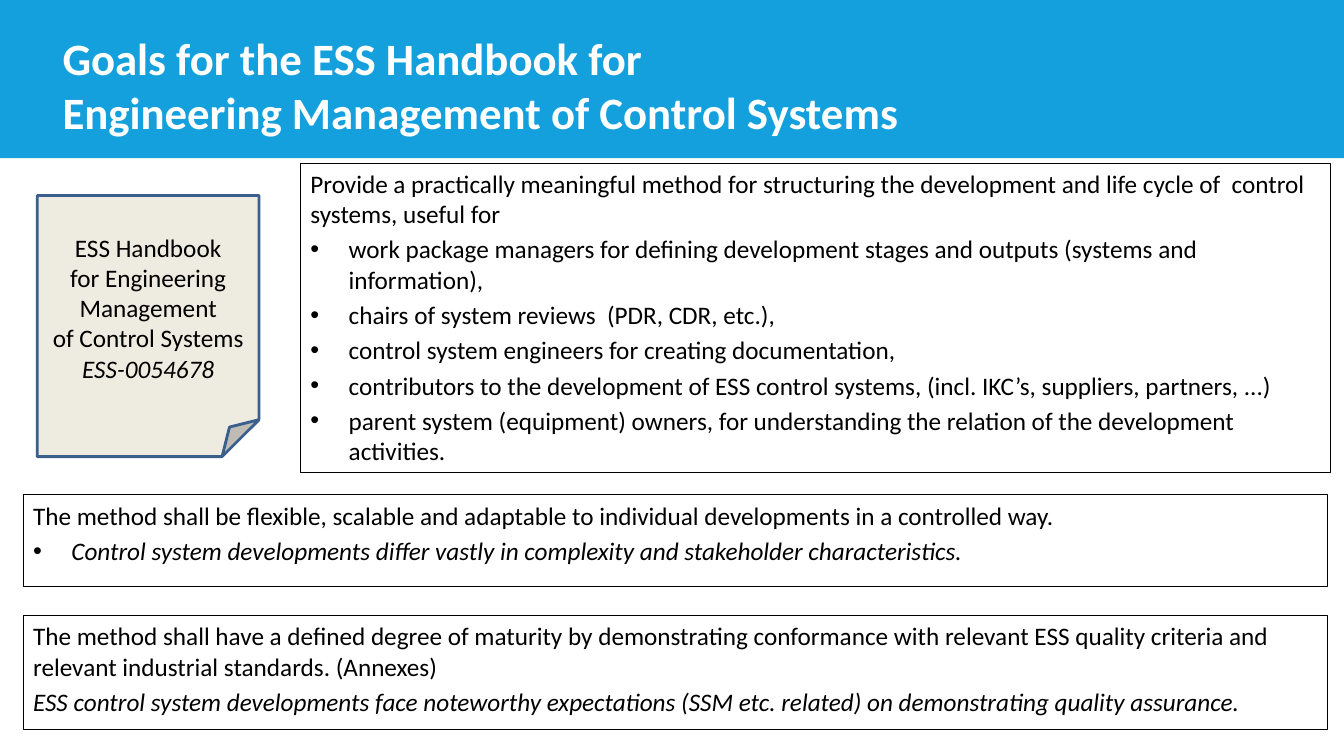
from lxml import etree
from pptx import Presentation
from pptx.dml.color import RGBColor
from pptx.enum.shapes import MSO_SHAPE
from pptx.enum.text import MSO_ANCHOR, MSO_AUTO_SIZE, PP_ALIGN
from pptx.oxml.ns import qn
from pptx.util import Inches, Pt

RECT, FOLDED = MSO_SHAPE.RECTANGLE, MSO_SHAPE.FOLDED_CORNER
TOP, MIDDLE, BOTTOM = MSO_ANCHOR.TOP, MSO_ANCHOR.MIDDLE, MSO_ANCHOR.BOTTOM
LEFT, CENTER = PP_ALIGN.LEFT, PP_ALIGN.CENTER
NO_AUTOFIT = MSO_AUTO_SIZE.NONE

WIDTH, HEIGHT = 13.33, 7.5
MARGIN = 0.23
BULLET_INDENT = Inches(0.38)
PLAIN, ITALIC = {"italic": False}, {"italic": True}


def color(hex_string):
    return RGBColor.from_string(hex_string)


def add_panel(kind, box, fill=None, line=None, line_width=0.75,
              paragraphs=(), anchor=TOP, align=LEFT, gap=0):
    """Add a shape; each paragraph is (text, has_bullet, font format)."""
    panel = slide.shapes.add_shape(kind, *[Inches(v) for v in box])
    panel.shadow.inherit = False
    if fill:
        panel.fill.solid()
        panel.fill.fore_color.rgb = color(fill)
    else:
        panel.fill.background()
    if line:
        panel.line.color.rgb = color(line)
        panel.line.width = Pt(line_width)
    else:
        panel.line.fill.background()
    frame = panel.text_frame
    frame.word_wrap = True
    frame.vertical_anchor = anchor
    for index, (text, has_bullet, font_format) in enumerate(paragraphs):
        paragraph = frame.add_paragraph() if index else frame.paragraphs[0]
        paragraph.alignment = align
        paragraph.space_before = Pt(gap if index else 0)
        if has_bullet:
            props = paragraph._p.get_or_add_pPr()
            props.set("marL", str(BULLET_INDENT))
            props.set("indent", str(-BULLET_INDENT))
            etree.SubElement(props, qn("a:buFont")).set("typeface", "Arial")
            etree.SubElement(props, qn("a:buChar")).set("char", "•")
        run = paragraph.add_run()
        run.text = text
        run.font.color.rgb = color("000000")
        for name, value in {"name": "Calibri", "size": Pt(18), **font_format}.items():
            setattr(run.font, name, value)
    return panel


presentation = Presentation()
presentation.slide_width, presentation.slide_height = Inches(WIDTH), Inches(HEIGHT)
slide = presentation.slides.add_slide(presentation.slide_layouts[5])

# Title on a blue banner
title = slide.shapes.title
banner = add_panel(RECT, (0, 0, WIDTH, 1.57), fill="13A0DD")
title.element.addprevious(banner.element)
title.left, title.top, title.width, title.height = [
    Inches(v) for v in (0.52, 0.29, 10.41, 1.13)]
heading = title.text_frame
heading.auto_size = NO_AUTOFIT
heading.word_wrap = True
heading.vertical_anchor = BOTTOM
heading.text = "Goals for the ESS Handbook for\vEngineering Management of Control Systems"
heading.paragraphs[0].alignment = LEFT
for heading_run in heading.paragraphs[0].runs:
    heading_run.font.color.rgb = color("FFFFFF")
    for name, value in {"name": "Calibri", "size": Pt(32), "bold": True}.items():
        setattr(heading_run.font, name, value)

# Handbook document
handbook = [
    ("ESS Handbook", False, PLAIN),
    ("for Engineering Management", False, PLAIN),
    ("of Control Systems", False, PLAIN),
    ("ESS-0054678", False, ITALIC),
]
add_panel(FOLDED, (0.37, 1.94, 2.2, 2.59), fill="EEECE1", line="3A5F8C",
          line_width=2, paragraphs=handbook, anchor=MIDDLE, align=CENTER)

# Goals: usefulness, flexibility, maturity
users = [
    "work package managers for defining development stages and outputs (systems and information),",
    "chairs of system reviews  (PDR, CDR, etc.),",
    "control system engineers for creating documentation,",
    "contributors to the development of ESS control systems, (incl. IKC’s, suppliers, partners, ...)",
    "parent system (equipment) owners, for understanding the relation of the development activities.",
]
usefulness = [
    ("Provide a practically meaningful method for structuring the development and "
     "life cycle of  control systems, useful for", False, PLAIN),
    *[(user, True, PLAIN) for user in users],
]
flexibility = [
    ("The method shall be flexible, scalable and adaptable to individual "
     "developments in a controlled way.", False, PLAIN),
    ("Control system developments differ vastly in complexity and stakeholder "
     "characteristics.", True, ITALIC),
]
maturity = [
    ("The method shall have a defined degree of maturity by demonstrating conformance "
     "with relevant ESS quality criteria and relevant industrial standards. (Annexes)",
     False, PLAIN),
    ("ESS control system developments face noteworthy expectations (SSM etc. related) "
     "on demonstrating quality assurance.", False, ITALIC),
]
full_width = 12.94
for box, goal in [
    ((2.98, 1.62, 10.22, 3.07), usefulness),
    ((MARGIN, 4.91, full_width, 0.91), flexibility),
    ((MARGIN, 6.11, full_width, 1.13), maturity),
]:
    add_panel(RECT, box, line="000000", paragraphs=goal, gap=3.6)

presentation.save("out.pptx")
